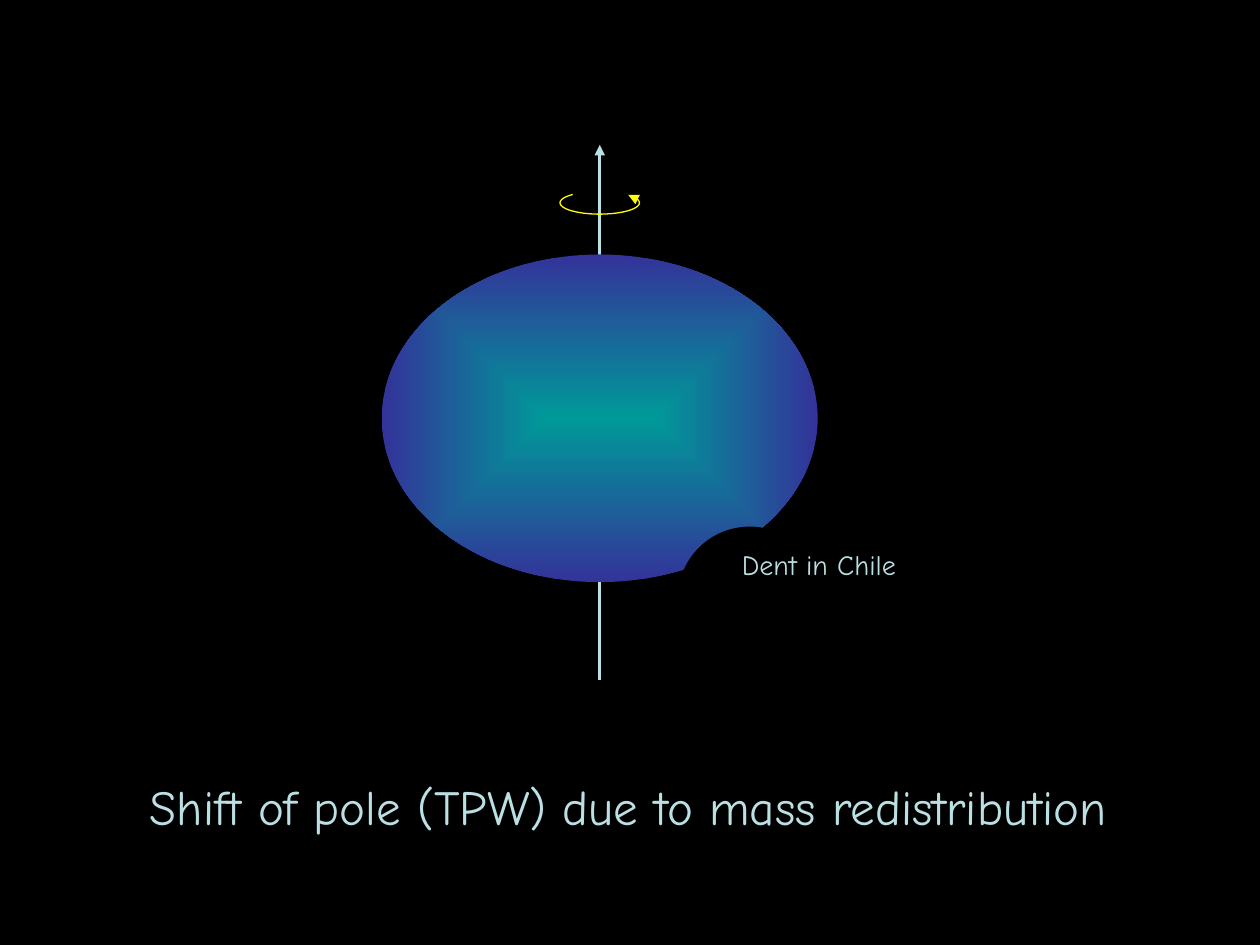
import math

import lxml.etree
import pptx
import pptx.dml.color
import pptx.enum.shapes
import pptx.enum.text
import pptx.oxml.ns
import pptx.util
from pptx.util import Inches

BLACK = pptx.dml.color.RGBColor(0x00, 0x00, 0x00)
PALE = pptx.dml.color.RGBColor(0xBB, 0xE0, 0xE3)
YELLOW = pptx.dml.color.RGBColor(0xFF, 0xFF, 0x00)
TEAL = pptx.dml.color.RGBColor(0x00, 0x99, 0x99)
INDIGO = pptx.dml.color.RGBColor(0x33, 0x33, 0x99)
FONT = "Comic Neue"
qn = pptx.oxml.ns.qn


def arc_points(center, radii, start, end, steps=48):
    """Return points along an ellipse between two angles in degrees."""
    angles = [math.radians(start + (end - start) * i / steps) for i in range(steps + 1)]
    return [(center[0] + radii[0] * math.cos(a), center[1] + radii[1] * math.sin(a))
            for a in angles]


def draw_outline(shapes, points, close):
    """Build a freeform through points given in inches."""
    corners = [(Inches(x), Inches(y)) for x, y in points]
    builder = shapes.build_freeform(*corners[0])
    builder.add_line_segments(corners[1:], close=close)
    shape = builder.convert_to_shape()
    shape.shadow.inherit = False
    return shape


def style_arrow(shape, color, width):
    """Colour a line and put a triangle at its end."""
    shape.line.color.rgb = color
    shape.line.width = pptx.util.Pt(width)
    line = shape.line._get_or_add_ln()
    lxml.etree.SubElement(line, qn("a:tailEnd"), type="triangle")


def add_rotation_axis(page, x, top, bottom):
    """Draw the spin axis with the arrow circling it."""
    group = page.shapes.add_group_shape()
    axis = group.shapes.add_connector(
        pptx.enum.shapes.MSO_CONNECTOR.STRAIGHT,
        Inches(x), Inches(bottom), Inches(x), Inches(top))
    style_arrow(axis, PALE, 1.5)
    lxml.etree.SubElement(axis._element.spPr, qn("a:effectLst"))
    points = arc_points((x, top + 0.46), (0.315, 0.09), 227, -44)
    spin = draw_outline(group.shapes, points, close=False)
    spin.fill.background()
    style_arrow(spin, YELLOW, 0.75)


def add_planet(page, left, top, width, height):
    """Draw the flattened globe shaded from its centre outwards."""
    globe = page.shapes.add_shape(
        pptx.enum.shapes.MSO_SHAPE.OVAL,
        Inches(left), Inches(top), Inches(width), Inches(height))
    globe.shadow.inherit = False
    globe.line.fill.background()
    globe.fill.gradient()
    for stop, color, position in zip(globe.fill.gradient_stops, (TEAL, INDIGO), (0, 1)):
        stop.color.rgb = color
        stop.position = position
    gradient = globe._element.spPr.find(qn("a:gradFill"))
    linear = gradient.find(qn("a:lin"))
    shading = lxml.etree.Element(qn("a:path"), attrib={"path": "shape"})
    lxml.etree.SubElement(shading, qn("a:fillToRect"),
                          attrib=dict.fromkeys("ltrb", "50000"))
    gradient.replace(linear, shading)


def add_dent(page, center, radius):
    """Cut a round bite out of the globe."""
    points = arc_points(center, (radius, radius), 178, 321)
    dent = draw_outline(page.shapes, points + [center], close=True)
    dent.fill.solid()
    dent.fill.fore_color.rgb = BLACK
    dent.line.fill.background()


def write_text(box, text, size, align, left, top, width, height):
    """Place a text shape and write one line in it."""
    box.left, box.top = Inches(left), Inches(top)
    box.width, box.height = Inches(width), Inches(height)
    frame = box.text_frame
    frame.text = text
    frame.word_wrap = False
    frame.auto_size = pptx.enum.text.MSO_AUTO_SIZE.SHAPE_TO_FIT_TEXT
    frame.vertical_anchor = pptx.enum.text.MSO_ANCHOR.TOP
    para = frame.paragraphs[0]
    para.alignment = align
    para.font.name = FONT
    para.font.size = pptx.util.Pt(size)
    para.font.color.rgb = PALE


def main():
    """Build and save the slide."""
    deck = pptx.Presentation()
    deck.slide_width, deck.slide_height = Inches(10), Inches(7.5)
    page = deck.slides.add_slide(deck.slide_layouts.get_by_name("Title Only"))
    page.background.fill.solid()
    page.background.fill.fore_color.rgb = BLACK
    align = pptx.enum.text.PP_ALIGN
    add_rotation_axis(page, 4.76, 1.15, 5.4)
    add_planet(page, 3.03, 2.02, 3.46, 2.6)
    write_text(page.shapes.title, "Shift of pole (TPW) due to mass redistribution",
               28, align.CENTER, 0.57, 6.11, 8.83, 0.57)
    add_dent(page, (5.95, 4.75), 0.57)
    label = page.shapes.add_textbox(0, 0, 0, 0)
    write_text(label, "Dent in Chile", 16, align.LEFT, 5.79, 4.3, 1.53, 0.37)
    deck.save("out.pptx")


if __name__ == "__main__":
    main()
